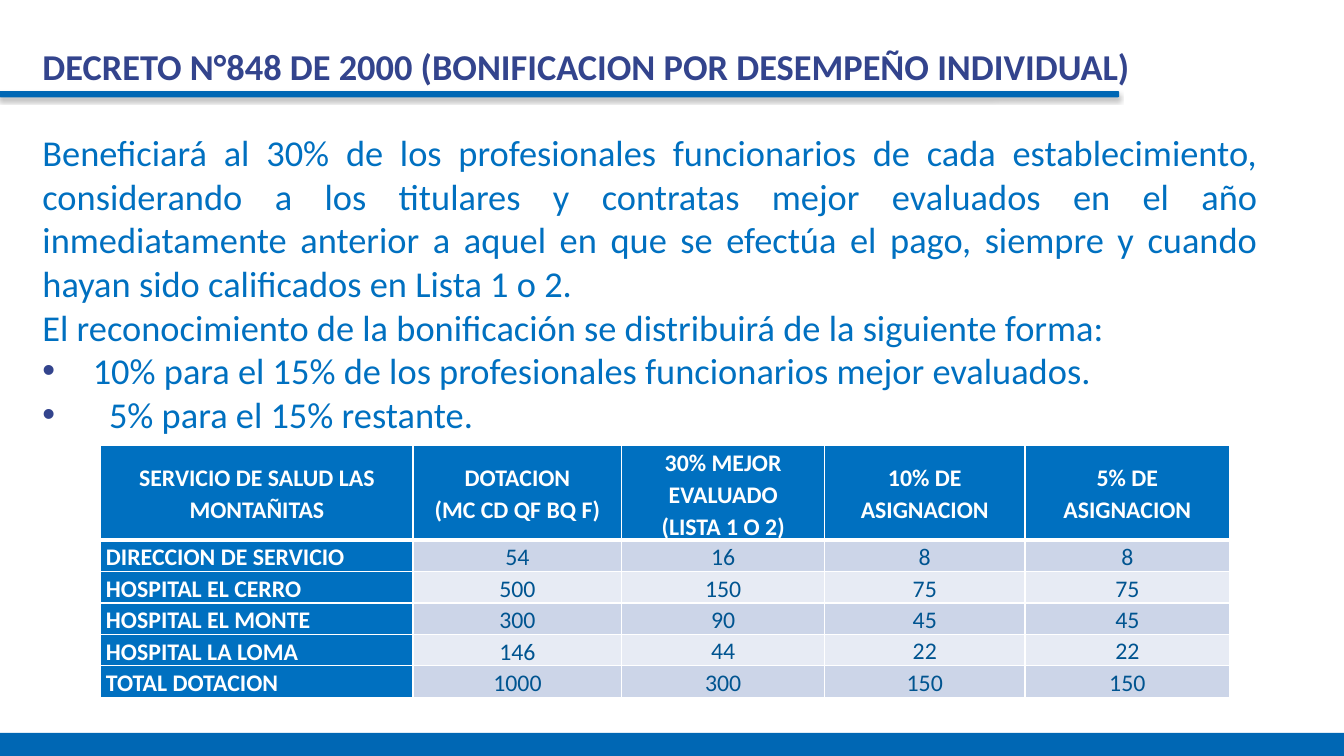
"""Build the slide on the individual performance bonus of Decreto 848."""
import pptx
import pptx.dml.color
import pptx.enum.shapes
import pptx.enum.text
import pptx.oxml
import pptx.oxml.ns
import pptx.util
from pptx.util import Cm, Pt

RGBColor = pptx.dml.color.RGBColor
ALIGN = pptx.enum.text.PP_ALIGN
ANCHOR = pptx.enum.text.MSO_ANCHOR
SHAPE = pptx.enum.shapes.MSO_SHAPE
NS = pptx.oxml.ns.nsdecls("a")

BAR_BLUE = RGBColor(0x00, 0x67, 0xB4)
TEXT_BLUE = RGBColor(0x00, 0x70, 0xC0)
NAVY = RGBColor(0x33, 0x44, 0x8D)
VALUE_BLUE = RGBColor(0x00, 0x54, 0x90)
WHITE = RGBColor(0xFF, 0xFF, 0xFF)
BANDS = [RGBColor(0xCC, 0xD5, 0xE8), RGBColor(0xE7, 0xEB, 0xF4)]


def add_text_frame(s, left, top, width, height):
    tf = s.shapes.add_textbox(Cm(left), Cm(top), Cm(width), Cm(height)).text_frame
    tf.word_wrap = True
    tf.margin_left = tf.margin_top = tf.margin_right = tf.margin_bottom = 0
    return tf


def style_font(p, size, color, bold=False):
    for r in p.runs:
        r.font.name = "Calibri"
        r.font.size = Pt(size)
        r.font.bold = bold
        r.font.color.rgb = color


prs = pptx.Presentation()
prs.slide_width, prs.slide_height = Cm(33.87), Cm(19.05)
s = prs.slides.add_slide(prs.slide_layouts[6])

rule = s.shapes.add_shape(SHAPE.ROUNDED_RECTANGLE, 0, Cm(2.31), Cm(28.19), Cm(0.13))
rule.adjustments[0] = 0.12
footer = s.shapes.add_shape(SHAPE.RECTANGLE, 0, Cm(18.47), Cm(33.93), Cm(0.58))
for sp in (rule, footer):
    sp.shadow.inherit = False
    sp.fill.solid()
    sp.fill.fore_color.rgb = BAR_BLUE
footer.line.fill.background()
rule.line.color.rgb = BAR_BLUE
rule.line.width = Pt(0.75)
effects = rule.element.spPr.find(pptx.oxml.ns.qn("a:effectLst"))
effects.append(pptx.oxml.parse_xml(
    f'<a:outerShdw {NS} blurRad="{Pt(3.1)}" dist="{Pt(1.8)}" dir="5400000" rotWithShape="0">'
    '<a:srgbClr val="000000"><a:alpha val="35000"/></a:srgbClr></a:outerShdw>'))

tf = add_text_frame(s, 1.07, 3.28, 30.66, 7.77)
paragraphs = [
    ("Beneficiará al 30% de los profesionales funcionarios de cada establecimiento, "
     "considerando a los titulares y contratas mejor evaluados en el año inmediatamente "
     "anterior a aquel en que se efectúa el pago, siempre y cuando hayan sido calificados "
     "en Lista 1 o 2.", 0),
    ("El reconocimiento de la bonificación se distribuirá de la siguiente forma:", 0),
    ("10% para el 15% de los profesionales funcionarios mejor evaluados.", 1.27),
    ("5% para el 15% restante.", 1.68),
]
for i, (text, indent) in enumerate(paragraphs):
    p = tf.paragraphs[0] if i == 0 else tf.add_paragraph()
    p.text = text
    p.alignment = ALIGN.JUSTIFY
    if indent:
        pPr = p._p.get_or_add_pPr()
        pPr.set("marL", str(Cm(indent)))
        pPr.set("indent", str(-Cm(indent)))
        for xml in (f'<a:buClr {NS}><a:srgbClr val="{NAVY}"/></a:buClr>',
                    f'<a:buFont {NS} typeface="Arial"/>',
                    f'<a:buChar {NS} char="•"/>'):
            pPr.append(pptx.oxml.parse_xml(xml))
    style_font(p, 26, TEXT_BLUE)

rows = [
    ["SERVICIO DE SALUD LAS MONTAÑITAS", "DOTACION\n(MC CD QF BQ F)",
     "30% MEJOR EVALUADO\n(LISTA 1 O 2)", "10% DE ASIGNACION", "5% DE ASIGNACION"],
    ["DIRECCION DE SERVICIO", "54", "16", "8", "8"],
    ["HOSPITAL EL CERRO", "500", "150", "75", "75"],
    ["HOSPITAL EL MONTE", "300", "90", "45", "45"],
    ["HOSPITAL LA LOMA", "146", "44", "22", "22"],
    ["TOTAL DOTACION", "1000", "300", "150", "150"],
]
widths = [7.87, 5.26, 5.11, 5.05, 5.16]
table = s.shapes.add_table(len(rows), len(widths), Cm(2.54), Cm(11.23),
                           Cm(sum(widths)), Cm(6.1)).table
table.horz_banding = False
for column, width in zip(table.columns, widths):
    column.width = Cm(width)
for i, values in enumerate(rows):
    table.rows[i].height = Cm(0.61 if i else 2.34)
    for j, value in enumerate(values):
        heading = i == 0 or j == 0
        cell = table.cell(i, j)
        cell.margin_left = cell.margin_right = Cm(0.13)
        cell.margin_top = cell.margin_bottom = 0
        cell.vertical_anchor = ANCHOR.MIDDLE if heading or j == 1 else ANCHOR.BOTTOM
        cell.fill.solid()
        cell.fill.fore_color.rgb = TEXT_BLUE if heading else BANDS[(i - 1) % 2]
        cell.text_frame.text = value
        for p in cell.text_frame.paragraphs:
            p.alignment = ALIGN.JUSTIFY if i and j == 0 else ALIGN.CENTER
            p.line_spacing = 1.1
            style_font(p, 17, WHITE if heading else VALUE_BLUE, heading)
        tcPr = cell._tc.get_or_add_tcPr()
        for k, side in enumerate("LRTB"):
            thick = (i, side) in ((0, "B"), (1, "T"))
            tcPr.insert(k, pptx.oxml.parse_xml(
                f'<a:ln{side} {NS} w="{Pt(3 if thick else 1)}"><a:solidFill>'
                f'<a:srgbClr val="{WHITE}"/></a:solidFill></a:ln{side}>'))

tf = add_text_frame(s, 1.07, 1.09, 32.18, 1.12)
tf.vertical_anchor = ANCHOR.MIDDLE
tf.text = "DECRETO N°848 DE 2000 (BONIFICACION POR DESEMPEÑO INDIVIDUAL)"
style_font(tf.paragraphs[0], 26, NAVY, True)

prs.save("out.pptx")
